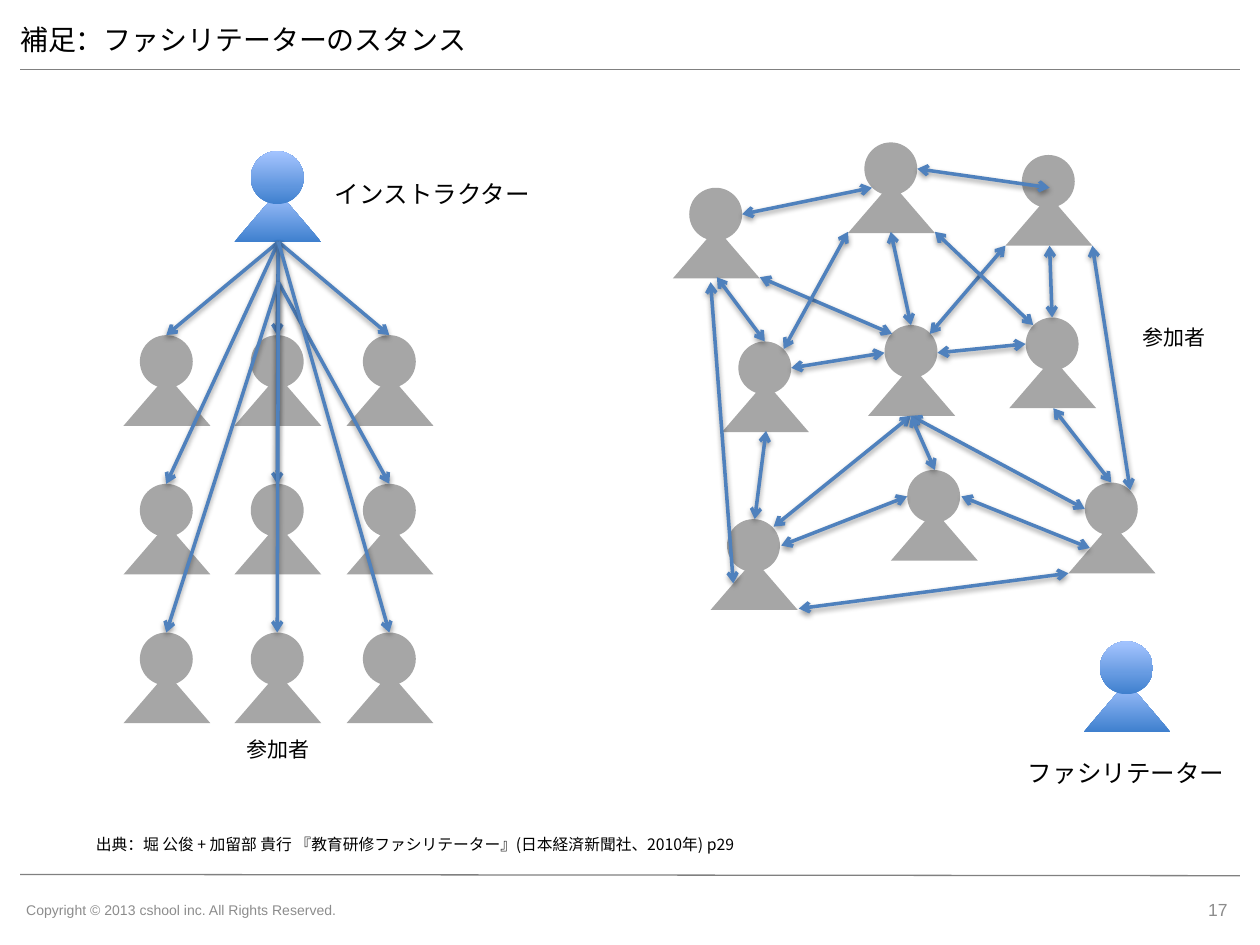
from lxml.etree import SubElement
from pptx import Presentation
from pptx.dml.color import RGBColor
from pptx.enum.shapes import MSO_CONNECTOR, MSO_SHAPE
from pptx.enum.text import MSO_ANCHOR, MSO_AUTO_SIZE as FIT, PP_ALIGN
from pptx.oxml.ns import qn
from pptx.util import Emu, Pt

SCALE = 9144  # EMU per px, 100 px to the inch
COLORS = {"text": "000000", "footer": "8C8C8C", "rule": "808080", "person": "A6A6A6",
          "arrow": "4F81BD", "leader_low": "3F80CE", "leader_high": "A4C4FF",
          "shadow": "000000"}
JAPANESE, LATIN = "Noto Sans CJK JP", "Arial"

# Content: box, wording, size, and whatever differs from a plain label
TITLE = ((6, 8, 892, 47), "補足：ファシリテーターのスタンス", 16)
LABELS = [
    ((186, 580, 71, 30), "参加者", 12),
    ((897, 253, 71, 30), "参加者", 12),
    ((806, 597, 179, 34), "ファシリテーター", 14),
    ((256, 137, 179, 34), "インストラクター", 14),
]
SOURCE = ((64, 650, 558, 35),
          "出典：堀 公俊 + 加留部 貴行 『教育研修ファシリテーター』(日本経済新聞社、2010年) p29", 9)
FOOTERS = [
    ((909, 702, 75, 40), "17", 10, PP_ALIGN.RIGHT),
    ((11, 702, 317, 40), "Copyright © 2013 cshool inc. All Rights Reserved.", 8, PP_ALIGN.LEFT),
]
RULES = [(16, 694, 984, 695), (16, 55, 984, 55)]

# People: left and top of each figure
INSTRUCTOR, FACILITATOR = (186, 120), (860, 509)
CLASS_COLUMNS, CLASS_ROWS = (98, 186, 275), (266, 384, 502)
GROUP = [(534, 149), (673, 113), (798, 123), (573, 271), (689, 258), (801, 252),
         (564, 412), (707, 373), (848, 383)]

# Start height of the arrow to each seat of the class, row by row
LECTURE_X = 221
LECTURE_STARTS = [(192, 192, 192), (192, 192, 224), (224, 224, 192)]
DIALOGUES = [
    (692, 149, 589, 170), (728, 134, 833, 149), (707, 184, 723, 258),
    (833, 195, 835, 252), (836, 324, 882, 383), (865, 435, 763, 394),
    (720, 394, 620, 433), (608, 342, 599, 412), (569, 220, 607, 271),
    (723, 330, 614, 418), (702, 280, 628, 292), (708, 265, 603, 220),
    (798, 195, 738, 265), (814, 273, 744, 280), (723, 330, 861, 404),
    (723, 330, 742, 373), (564, 224, 582, 463), (742, 184, 820, 258),
    (673, 184, 622, 277), (848, 455, 634, 483), (867, 195, 897, 389),
]


def px(*values):
    return [Emu(value * SCALE) for value in values]


def rgb(name):
    return RGBColor.from_string(COLORS[name])


def write(shape, text, size, color="text", font=JAPANESE, align=PP_ALIGN.LEFT,
          spacing=None, **frame_format):
    frame = shape.text_frame
    for name, value in frame_format.items():
        setattr(frame, name, value)
    paragraph = frame.paragraphs[0]
    paragraph.alignment = align
    if spacing:
        paragraph.line_spacing = spacing
    run = paragraph.add_run()
    run.text = text
    for name, value in {"size": Pt(size), "name": font, "bold": False}.items():
        setattr(run.font, name, value)
    run.font.color.rgb = rgb(color)
    SubElement(run.font._element, qn("a:ea"), typeface=font)


def add_person(shapes, left, top, leader=False):
    """Add a triangle body with a round head; return the head."""
    group = shapes.add_group_shape()
    for kind, box in ((MSO_SHAPE.ISOSCELES_TRIANGLE, (left, top + 32, 69, 40)),
                      (MSO_SHAPE.OVAL, (left + 13, top, 42, 42))):
        part = group.shapes.add_shape(kind, *px(*box))
        part.shadow.inherit = False
        part.line.fill.background()
        if leader:
            part.fill.gradient()
            part.fill.gradient_angle = 90
            for stop, name in zip(part.fill.gradient_stops, ("leader_low", "leader_high")):
                stop.color.rgb = rgb(name)
                stop.position = 0 if name == "leader_low" else 1
        else:
            part.fill.solid()
            part.fill.fore_color.rgb = rgb("person")
    return part


def add_line(shapes, points, color, width):
    line = shapes.add_connector(MSO_CONNECTOR.STRAIGHT, *px(*points))
    line.line.color.rgb = rgb(color)
    line.line.width = Pt(width)
    return line, SubElement(line._element.spPr, qn("a:effectLst"))


def add_arrow(shapes, points, ends):
    arrow, effects = add_line(shapes, points, "arrow", 2)
    for end in ends:
        SubElement(arrow.line._get_or_add_ln(), qn(f"a:{end}"), type="arrow")
    shadow = SubElement(effects, qn("a:outerShdw"), blurRad="40000", dist="20000",
                        dir="5400000", rotWithShape="0")
    color = SubElement(shadow, qn("a:srgbClr"), val=COLORS["shadow"])
    SubElement(color, qn("a:alpha"), val="38000")
    return arrow


def main():
    presentation = Presentation()
    presentation.slide_width, presentation.slide_height = px(1000, 750)
    slide = presentation.slides.add_slide(presentation.slide_layouts[5])
    shapes = slide.shapes

    # Title, rules and footer
    box, text, size = TITLE
    for name, value in zip(("left", "top", "width", "height"), px(*box)):
        setattr(shapes.title, name, value)
    write(shapes.title, text, size, vertical_anchor=MSO_ANCHOR.MIDDLE, auto_size=FIT.NONE)
    for points in RULES:
        add_line(shapes, points, "rule", 0.75)
    for box, text, size, align in FOOTERS:
        write(shapes.add_textbox(*px(*box)), text, size, "footer", LATIN, align,
              vertical_anchor=MSO_ANCHOR.MIDDLE, word_wrap=True)

    # Lecture: one instructor speaks to every seat
    for place in (INSTRUCTOR, FACILITATOR):
        add_person(shapes, *place, leader=True)
    heads = [[add_person(shapes, left, top) for left in CLASS_COLUMNS] for top in CLASS_ROWS]
    for head_row, start_row in zip(heads, LECTURE_STARTS):
        for head, start in zip(head_row, start_row):
            arrow = add_arrow(shapes, (LECTURE_X, start, LECTURE_X, start), ["tailEnd"])
            arrow.end_connect(head, 0)

    # Workshop: participants speak to each other
    for place in GROUP:
        add_person(shapes, *place)
    for points in DIALOGUES:
        add_arrow(shapes, points, ["headEnd", "tailEnd"])

    # Labels and citation
    for box, text, size in LABELS:
        write(shapes.add_textbox(*px(*box)), text, size, word_wrap=False,
              auto_size=FIT.SHAPE_TO_FIT_TEXT)
    box, text, size = SOURCE
    side, edge = px(12, 8)
    write(shapes.add_textbox(*px(*box)), text, size, spacing=1.3, word_wrap=False,
          auto_size=FIT.SHAPE_TO_FIT_TEXT, vertical_anchor=MSO_ANCHOR.MIDDLE,
          margin_left=side, margin_right=side, margin_top=edge, margin_bottom=edge)

    presentation.save("out.pptx")


if __name__ == "__main__":
    main()
